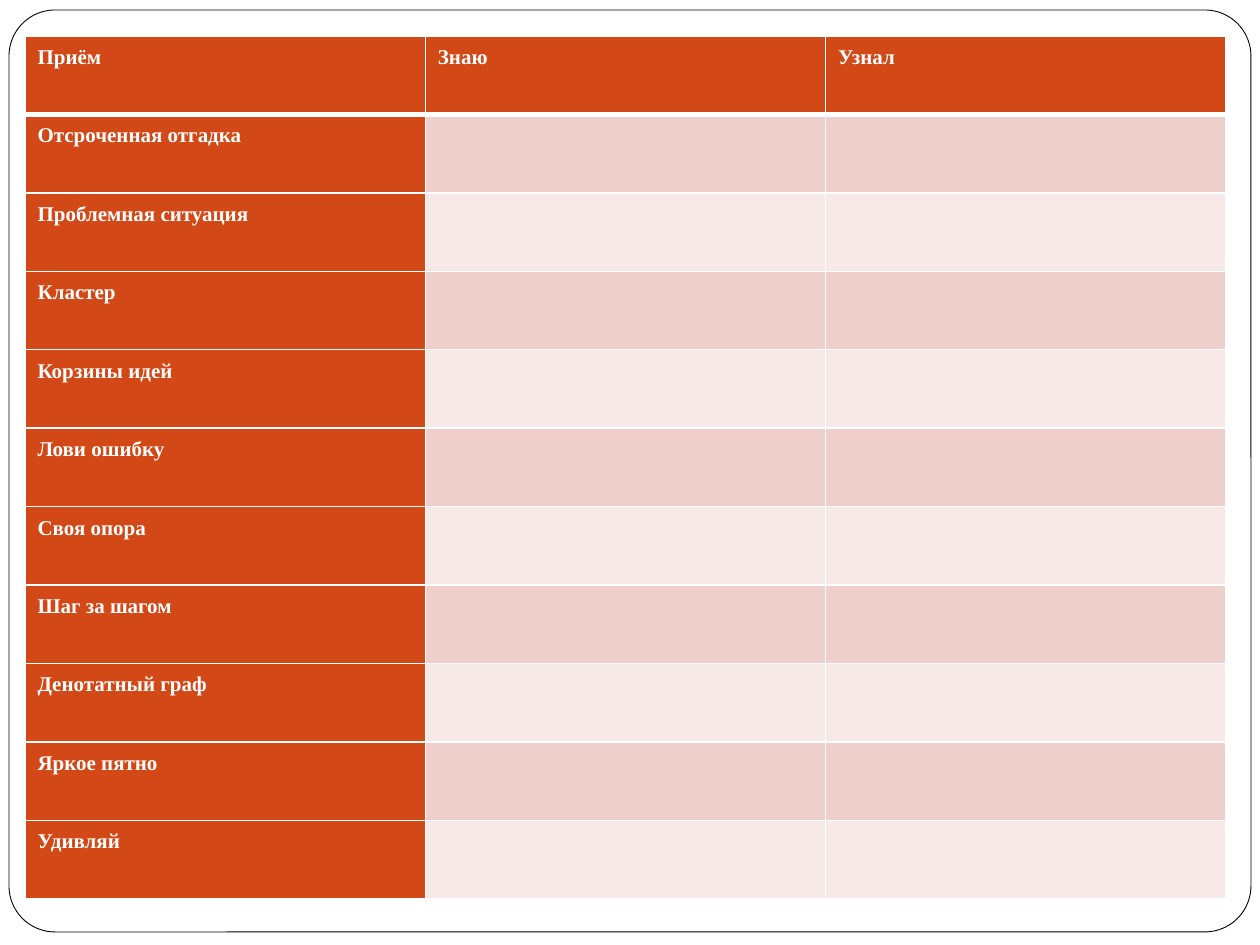
from lxml import etree
from pptx import Presentation
from pptx.dml.color import RGBColor
from pptx.enum.shapes import MSO_SHAPE
from pptx.oxml.ns import qn
from pptx.util import Pt

ROUNDED = MSO_SHAPE.ROUNDED_RECTANGLE
PX = 914400 / 126

WHITE = RGBColor(0xFF, 0xFF, 0xFF)
BLACK = RGBColor(0x00, 0x00, 0x00)
ORANGE = RGBColor(0xD3, 0x48, 0x17)
BANDS = (RGBColor(0xEF, 0xCF, 0xCC), RGBColor(0xF7, 0xE9, 0xE8))

FONT = "Times New Roman"
HEADINGS = ["Приём", "Знаю", "Узнал"]
TECHNIQUES = [
    "Отсроченная отгадка",
    "Проблемная ситуация",
    "Кластер",
    "Корзины идей",
    "Лови ошибку",
    "Своя опора",
    "Шаг за шагом",
    "Денотатный граф",
    "Яркое пятно",
    "Удивляй",
]


def px(length):
    return round(length * PX)


def add_frame(page, left, top, width, height):
    frame = page.shapes.add_shape(ROUNDED, px(left), px(top), px(width), px(height))
    frame.adjustments[0] = 0.05
    frame.shadow.inherit = False
    frame.fill.solid()
    frame.fill.fore_color.rgb = WHITE
    frame.line.color.rgb = BLACK
    frame.line.width = Pt(0.5)


def set_borders(cell, top, bottom):
    """Draw white cell borders; top and bottom are widths in points."""
    properties = cell._tc.get_or_add_tcPr()
    for side, width in (("L", 1), ("R", 1), ("T", top), ("B", bottom)):
        line = etree.SubElement(properties, qn(f"a:ln{side}"), w=str(Pt(width)))
        fill = etree.SubElement(line, qn("a:solidFill"))
        etree.SubElement(fill, qn("a:srgbClr"), val=str(WHITE))


def write_label(cell, text):
    cell.text = text
    para = cell.text_frame.paragraphs[0]
    para.line_spacing = 1.15
    para.font.name = FONT
    para.font.size = Pt(12)
    para.font.bold = True
    para.font.color.rgb = WHITE


def add_knowledge_table(page, left, top, width, height):
    rows, columns = len(TECHNIQUES) + 1, len(HEADINGS)
    table = page.shapes.add_table(
        rows, columns, px(left), px(top), px(width), px(height)
    ).table
    labels = [HEADINGS] + [[name] + [""] * (columns - 1) for name in TECHNIQUES]

    for r, row_labels in enumerate(labels):
        for c, label in enumerate(row_labels):
            cell = table.cell(r, c)
            # A thicker rule separates the header from the body
            set_borders(cell, top=3 if r == 1 else 1, bottom=3 if r == 0 else 1)
            cell.fill.solid()
            if label:
                cell.fill.fore_color.rgb = ORANGE
                write_label(cell, label)
            else:
                cell.fill.fore_color.rgb = BANDS[(r - 1) % 2]


def main():
    deck = Presentation()
    deck.slide_width, deck.slide_height = px(1260), px(945)
    page = deck.slides.add_slide(deck.slide_layouts[6])

    # Outer frame
    add_frame(page, 9, 10, 1242, 922)
    # Techniques with columns to fill in
    add_knowledge_table(page, 25, 36, 1201, 863)

    deck.save("out.pptx")


if __name__ == "__main__":
    main()
